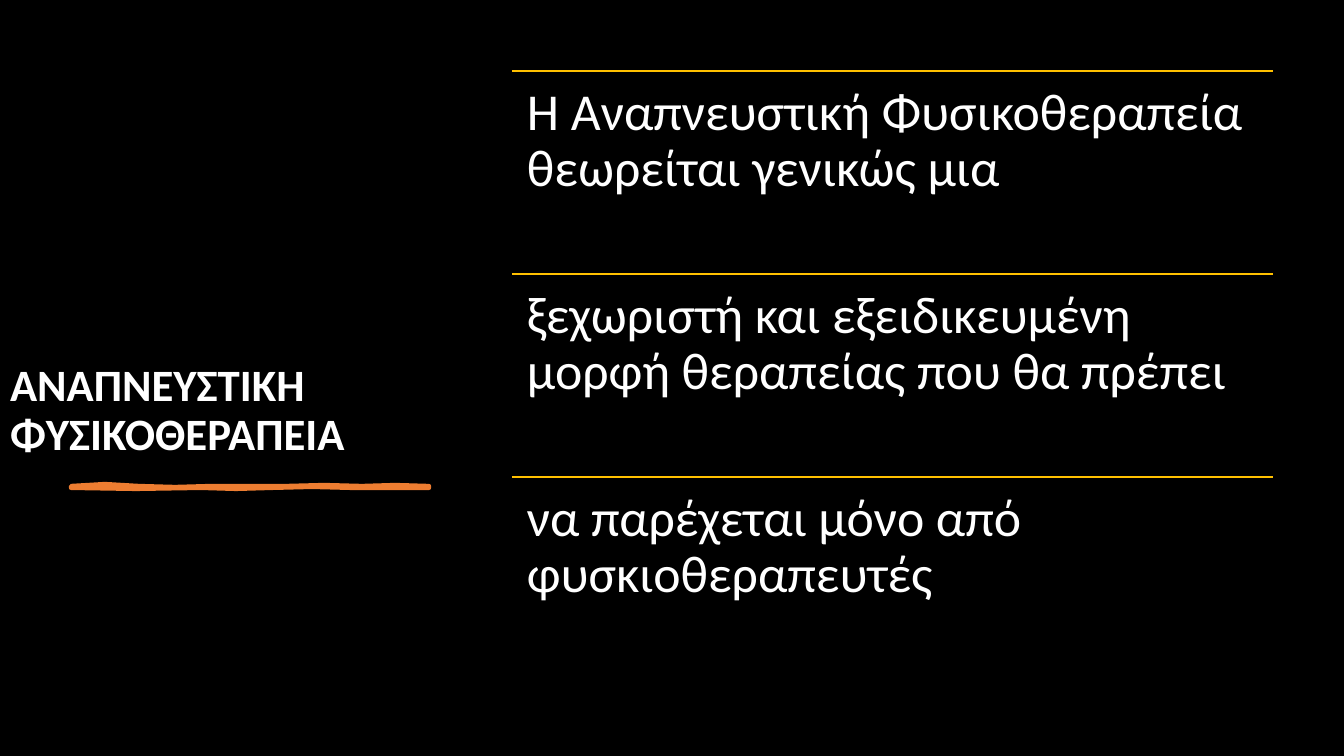
from lxml import etree
from pptx import Presentation
from pptx.dml.color import RGBColor
from pptx.enum.shapes import MSO_CONNECTOR
from pptx.enum.text import MSO_ANCHOR, MSO_AUTO_SIZE, PP_ALIGN
from pptx.oxml.ns import qn
from pptx.util import Pt

TITLE = "ΑΝΑΠΝΕΥΣΤΙΚΗ ΦΥΣΙΚΟΘΕΡΑΠΕΙΑ"
STATEMENTS = [
    "Η Αναπνευστική Φυσικοθεραπεία θεωρείται γενικώς μια",
    "ξεχωριστή και εξειδικευμένη μορφή θεραπείας που θα πρέπει",
    "να παρέχεται μόνο από φυσκιοθεραπευτές",
]
BRUSH_OUTLINE = [
    (71, 486), (105, 484), (139, 486), (175, 487), (211, 486), (286, 486),
    (324, 485), (362, 486), (395, 485), (429, 486), (429, 488), (390, 488),
    (351, 488), (312, 487), (272, 488), (236, 489), (201, 488), (136, 489),
    (71, 488),
]
COLORS = {"background": "000000", "text": "FFFFFF", "brush": "ED7D31", "rule": "FFC000"}
FONT = "Calibri"
LEFT = PP_ALIGN.LEFT
TOP, BOTTOM = MSO_ANCHOR.TOP, MSO_ANCHOR.BOTTOM
NO_AUTOFIT = MSO_AUTO_SIZE.NONE
STRAIGHT = MSO_CONNECTOR.STRAIGHT
SCALE = 914400 / 100.8
LIST_LEFT, LIST_TOP, LIST_WIDTH, ROW_HEIGHT = 512, 71, 761, 203


def px(length):
    return round(length * SCALE)


def color(name):
    return RGBColor.from_string(COLORS[name])


def write(box, text, size, bold=False, anchor=TOP, inset=None):
    frame = box.text_frame
    frame.word_wrap = True
    frame.auto_size = NO_AUTOFIT
    frame.vertical_anchor = anchor
    if inset is not None:
        frame.margin_left = frame.margin_right = px(inset)
        frame.margin_top = frame.margin_bottom = px(inset)
    para = frame.paragraphs[0]
    para.alignment = LEFT
    para.line_spacing = 0.9
    span = para.add_run()
    span.text = text
    span.font.name = FONT
    span.font.size = Pt(size)
    span.font.bold = bold
    span.font.color.rgb = color("text")


def add_brush_stroke(page):
    builder = page.shapes.build_freeform(*BRUSH_OUTLINE[0], scale=SCALE)
    builder.add_line_segments(BRUSH_OUTLINE[1:], close=True)
    stroke = builder.convert_to_shape()
    stroke.shadow.inherit = False
    stroke.fill.solid()
    stroke.fill.fore_color.rgb = color("brush")
    stroke.line.color.rgb = color("brush")
    stroke.line.width = Pt(3)
    etree.SubElement(stroke.line._get_or_add_ln(), qn("a:round"))


def add_statement(group, text, top):
    rule = group.shapes.add_connector(
        STRAIGHT, px(LIST_LEFT), px(top), px(LIST_LEFT + LIST_WIDTH), px(top))
    rule.line.color.rgb = color("rule")
    rule.line.width = Pt(1)
    etree.SubElement(rule._element.spPr, qn("a:effectLst"))
    box = group.shapes.add_textbox(px(LIST_LEFT), px(top), px(LIST_WIDTH), px(ROW_HEIGHT))
    write(box, text, 37, inset=15)


def main():
    deck = Presentation()
    deck.slide_width, deck.slide_height = px(1344), px(756)
    page = deck.slides.add_slide(deck.slide_layouts[5])
    page.background.fill.solid()
    page.background.fill.fore_color.rgb = color("background")

    title = page.shapes.title
    title.left, title.top, title.width, title.height = px(0), px(71), px(464), px(394)
    write(title, TITLE, 32, bold=True, anchor=BOTTOM)
    add_brush_stroke(page)

    group = page.shapes.add_group_shape()
    for row, text in enumerate(STATEMENTS):
        add_statement(group, text, LIST_TOP + row * ROW_HEIGHT)
    deck.save("out.pptx")


if __name__ == "__main__":
    main()
